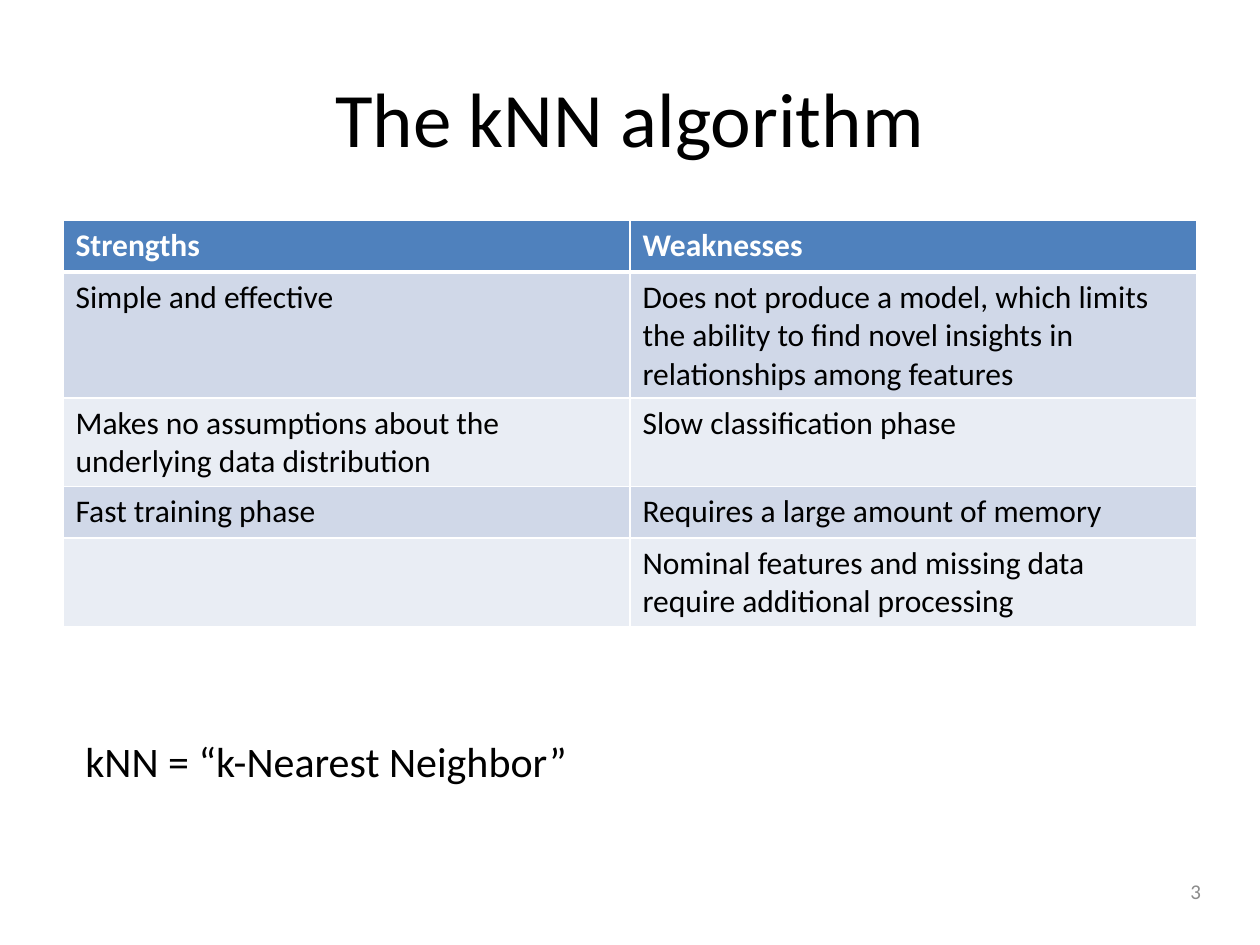
from lxml import etree
from pptx import Presentation
from pptx.dml.color import RGBColor
from pptx.enum import text as t
from pptx.oxml import ns
from pptx.util import Inches, Pt

BLACK = RGBColor(0x00, 0x00, 0x00)
WHITE = RGBColor(0xFF, 0xFF, 0xFF)
GRAY = RGBColor(0x8C, 0x8C, 0x8C)
HEADER_BLUE = RGBColor(0x4F, 0x81, 0xBD)
BANDS = (RGBColor(0xD0, 0xD8, 0xE8), RGBColor(0xE9, 0xED, 0xF4))
FONT = "Calibri"

ROWS = [
    ("Strengths", "Weaknesses"),
    ("Simple and effective",
     "Does not produce a model, which limits the ability to find novel "
     "insights in relationships among features"),
    ("Makes no assumptions about the underlying data distribution",
     "Slow classification phase"),
    ("Fast training phase", "Requires a large amount of memory"),
    ("", "Nominal features and missing data require additional processing"),
]


def write(frame, words, size=18, color=BLACK, bold=False,
          align=t.PP_ALIGN.LEFT):
    para = frame.paragraphs[0]
    para.alignment = align
    para.font.size = Pt(size)
    if words:
        span = para.add_run()
        span.text = words
        span.font.name = FONT
        span.font.size = Pt(size)
        span.font.bold = bold
        span.font.color.rgb = color
    else:
        # An empty cell takes its line height from the paragraph end mark.
        etree.SubElement(para._p, ns.qn("a:endParaRPr"), sz=str(size * 100))


def add_text(page, box, words, anchor=t.MSO_ANCHOR.MIDDLE, wrap=True,
             **style):
    frame = page.shapes.add_textbox(*map(Inches, box)).text_frame
    frame.word_wrap = wrap
    frame.vertical_anchor = anchor
    write(frame, words, **style)
    return frame


def set_borders(cell, color, **widths):
    """Draw cell edges; widths maps L, R, T and B, in that order, to points."""
    props = cell._tc.get_or_add_tcPr()
    for side, width in widths.items():
        line = etree.SubElement(props, ns.qn(f"a:ln{side}"),
                                w=str(Pt(width)))
        fill = etree.SubElement(line, ns.qn("a:solidFill"))
        etree.SubElement(fill, ns.qn("a:srgbClr"), val=str(color))


def add_comparison(page, box, rows):
    left, top, width, row_height = map(Inches, box)
    table = page.shapes.add_table(len(rows), len(rows[0]), left, top, width,
                                  row_height * len(rows)).table
    for r, row in enumerate(rows):
        table.rows[r].height = row_height
        header = r == 0
        for c, words in enumerate(row):
            cell = table.cell(r, c)
            set_borders(cell, WHITE, L=1, R=1, T=3 if r == 1 else 1,
                        B=3 if header else 1)
            cell.fill.solid()
            cell.fill.fore_color.rgb = (HEADER_BLUE if header
                                        else BANDS[(r - 1) % 2])
            write(cell.text_frame, words, bold=header,
                  color=WHITE if header else BLACK)


def main():
    deck = Presentation()
    deck.slide_width, deck.slide_height = Inches(10), Inches(7.5)
    page = deck.slides.add_slide(deck.slide_layouts[6])
    add_text(page, (7.3, 6.87, 2.33, 0.4), "3", size=12, color=GRAY,
             align=t.PP_ALIGN.RIGHT)
    add_text(page, (0.5, 0.3, 9, 1.25), "The kNN algorithm", size=44,
             align=t.PP_ALIGN.CENTER)
    add_comparison(page, (0.5, 1.75, 9, 0.41), ROWS)
    note = add_text(page, (0.58, 5.79, 4.07, 0.5),
                    "kNN = “k-Nearest Neighbor”", size=24, wrap=False,
                    anchor=t.MSO_ANCHOR.TOP)
    note.auto_size = t.MSO_AUTO_SIZE.SHAPE_TO_FIT_TEXT
    deck.save("out.pptx")


if __name__ == "__main__":
    main()
